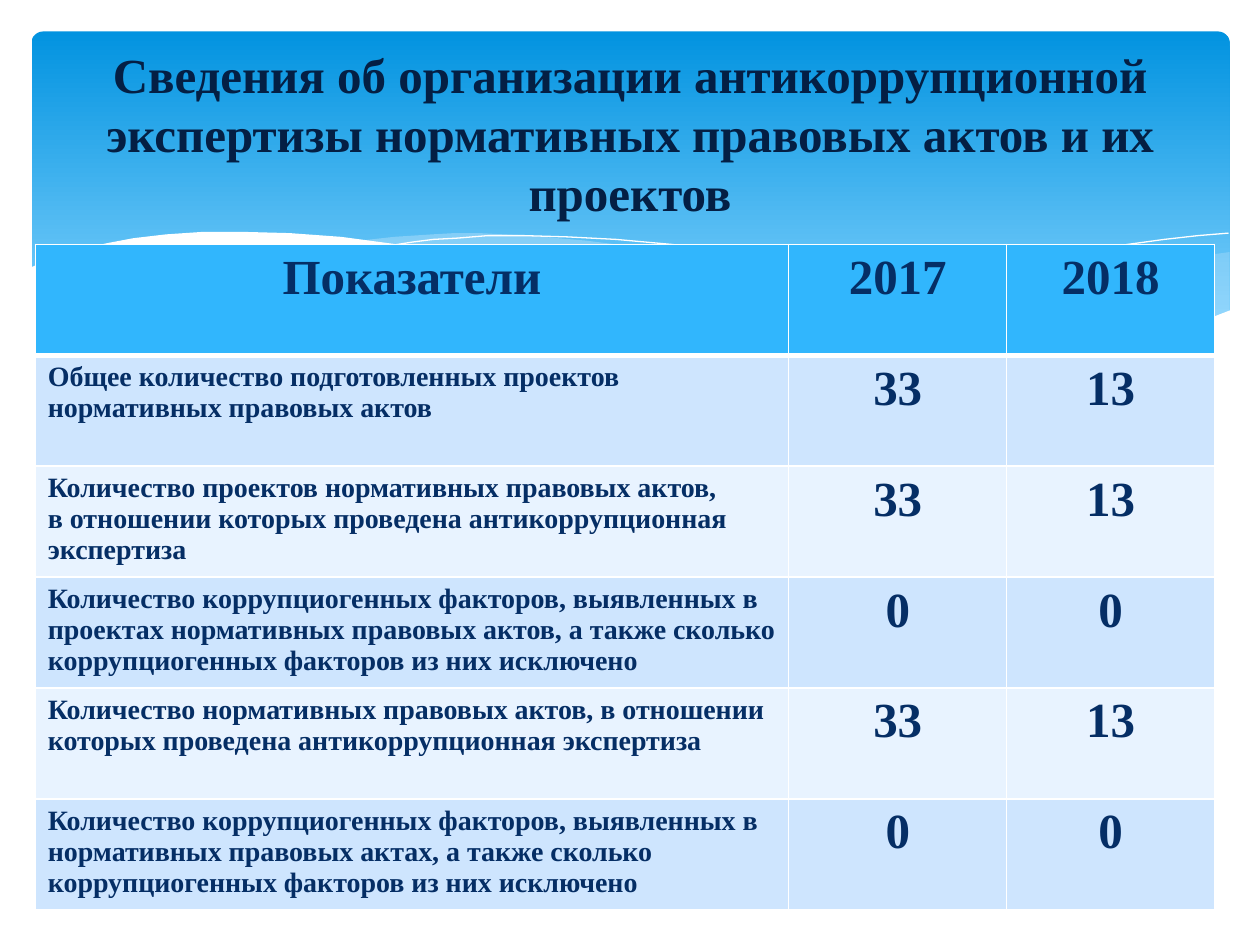
from lxml import etree
from pptx import Presentation
from pptx.dml.color import RGBColor
from pptx.enum.shapes import MSO_SHAPE
from pptx.enum.text import MSO_ANCHOR, PP_ALIGN
from pptx.oxml.ns import qn
from pptx.util import Inches, Pt

ROUNDED = MSO_SHAPE.ROUNDED_RECTANGLE
MIDDLE = MSO_ANCHOR.MIDDLE
CENTER, LEFT = PP_ALIGN.CENTER, PP_ALIGN.LEFT

FONT = "Times New Roman"
COLORS = {
    "sky_top": "0293E0", "sky_bottom": "83D3FE", "wave": "C6E7FC", "white": "FFFFFF",
    "title": "041F44", "text": "052E65",
    "header": "31B6FD", "odd_row": "CEE5FE", "even_row": "E8F3FF",
}

TITLE = ("Сведения об организации антикоррупционной экспертизы "
         "нормативных правовых актов и их проектов")
HEADER = ("Показатели", "2017", "2018")
ROWS = [
    ("Общее количество подготовленных проектов нормативных правовых актов", "33", "13"),
    ("Количество проектов нормативных правовых актов,\n"
     "в отношении которых проведена антикоррупционная экспертиза", "33", "13"),
    ("Количество коррупциогенных факторов, выявленных в проектах нормативных правовых актов, "
     "а также сколько коррупциогенных факторов из них исключено", "0", "0"),
    ("Количество нормативных правовых актов, в отношении которых проведена "
     "антикоррупционная экспертиза", "33", "13"),
    ("Количество коррупциогенных факторов, выявленных в нормативных правовых актах, "
     "а также сколько коррупциогенных факторов из них исключено", "0", "0"),
]
COLUMN_WIDTHS = (5.98, 1.73, 1.65)
ROW_HEIGHT = 0.88

RIGHT_WAVE = [
    (9.76, 2), (9.48, 2.04), (9.21, 2.1), (8.91, 2.16), (8.61, 2.23), (8.05, 2.37),
    (7.53, 2.48), (7.06, 2.57), (6.61, 2.65), (6.91, 2.69), (7.19, 2.72), (7.45, 2.75),
    (7.69, 2.77), (8.03, 2.78), (8.35, 2.77), (8.63, 2.75), (8.89, 2.72), (9.13, 2.67),
    (9.35, 2.62), (9.49, 2.57), (9.63, 2.52), (9.76, 2.47),
]
MIDDLE_WAVE = [
    (8.93, 2.73), (8.66, 2.69), (8.37, 2.65), (8.07, 2.6), (7.75, 2.54), (7.41, 2.47),
    (7.06, 2.4), (6.68, 2.31), (6.29, 2.22), (5.98, 2.14), (5.69, 2.08), (5.41, 2.03),
    (5.14, 1.98), (4.89, 1.94), (4.65, 1.91), (4.42, 1.89), (4.2, 1.87), (3.99, 1.86),
    (3.8, 1.85), (3.61, 1.85), (3.44, 1.86), (3.13, 1.88), (2.86, 1.91), (3.23, 1.96),
    (3.62, 2.03), (4.04, 2.11), (4.49, 2.22), (4.91, 2.32), (5.3, 2.4), (5.66, 2.48),
    (6.01, 2.55), (6.34, 2.61), (6.65, 2.66), (6.95, 2.7), (7.22, 2.74), (7.48, 2.76),
    (7.85, 2.78), (8.28, 2.78), (8.57, 2.77), (8.76, 2.75),
]
LEFT_CREST = [
    (3.09, 1.95), (3.28, 1.92), (3.44, 1.9), (3.63, 1.89), (3.87, 1.87), (4.16, 1.87),
    (4.5, 1.88), (4.89, 1.9), (5.33, 1.94), (5.82, 2), (6.36, 2.08), (6.95, 2.19),
    (7.6, 2.33), (8.31, 2.51), (9.07, 2.72),
]
RIGHT_CREST = [
    (6.13, 2.57), (6.53, 2.46), (6.95, 2.35), (7.48, 2.23), (8.06, 2.1), (8.66, 1.99),
    (8.95, 1.94), (9.24, 1.9), (9.51, 1.87), (9.75, 1.85),
]
WHITE_WAVE = [
    (9.77, 2.46), (9.59, 2.53), (9.4, 2.59), (9.2, 2.65), (8.99, 2.69), (8.75, 2.73),
    (8.5, 2.75), (8.09, 2.77), (7.78, 2.76), (7.44, 2.74), (7.08, 2.7), (6.68, 2.65),
    (6.26, 2.58), (5.79, 2.5), (5.29, 2.39), (4.75, 2.27), (4.18, 2.13), (3.65, 2.02),
    (3.16, 1.94), (2.71, 1.88), (2.3, 1.85), (1.93, 1.84), (1.61, 1.84), (1.32, 1.86),
    (1.06, 1.89), (0.85, 1.93), (0.67, 1.97), (0.52, 2.01), (0.36, 2.07), (0.23, 2.13),
    (0.23, 3.29), (9.77, 3.29),
]
WAVES = [
    (RIGHT_WAVE, "wave", 29), (MIDDLE_WAVE, "wave", 40),
    (LEFT_CREST, None, None), (RIGHT_CREST, None, None), (WHITE_WAVE, "white", 100),
]


def rgb(name):
    return RGBColor.from_string(COLORS[name])


def add_wave(page, points, color, opacity):
    corners = [(Inches(x), Inches(y)) for x, y in points]
    builder = page.shapes.build_freeform(*corners[0])
    builder.add_line_segments(corners[1:], close=color is not None)
    wave = builder.convert_to_shape()
    wave.shadow.inherit = False
    if color is None:
        wave.fill.background()
        wave.line.color.rgb = rgb("white")
        wave.line.width = Pt(0)
        return
    wave.fill.solid()
    wave.fill.fore_color.rgb = rgb(color)
    wave.line.fill.background()
    if opacity < 100:
        tint = wave._element.spPr.find(qn("a:solidFill"))[0]
        etree.SubElement(tint, qn("a:alpha"), val=str(opacity * 1000))


def write(frame, text, size, color, align):
    for index, line in enumerate(text.split("\n")):
        para = frame.paragraphs[0] if index == 0 else frame.add_paragraph()
        para.alignment = align
        span = para.add_run()
        span.text = line
        span.font.name, span.font.size, span.font.bold = FONT, Pt(size), True
        span.font.color.rgb = rgb(color)


def set_borders(cell, top, bottom):
    sides = (("lnL", 1), ("lnR", 1), ("lnT", top), ("lnB", bottom))
    for index, (side, width) in enumerate(sides):
        edge = etree.Element(qn("a:" + side), w=str(Pt(width)))
        fill = etree.SubElement(edge, qn("a:solidFill"))
        etree.SubElement(fill, qn("a:srgbClr"), val=COLORS["white"])
        cell._tc.get_or_add_tcPr().insert(index, edge)


def add_banner(page):
    banner = page.shapes.add_shape(ROUNDED, Inches(0.25), Inches(0.25), Inches(9.51), Inches(2.7))
    banner.adjustments[0] = 0.034
    banner.shadow.inherit = False
    banner.line.fill.background()
    banner.fill.gradient()
    banner.fill.gradient_angle = 270
    stops = ((0, "sky_top"), (0.9, "sky_bottom"))
    for stop, (position, color) in zip(banner.fill.gradient_stops, stops):
        stop.position = position
        stop.color.rgb = rgb(color)


def add_indicators(page):
    records = [HEADER] + ROWS
    table = page.shapes.add_table(
        len(records), len(HEADER), Inches(0.28), Inches(1.94),
        Inches(sum(COLUMN_WIDTHS)), Inches(ROW_HEIGHT * len(records))).table
    for column, width in zip(table.columns, COLUMN_WIDTHS):
        column.width = Inches(width)
    for r, record in enumerate(records):
        table.rows[r].height = Inches(ROW_HEIGHT)
        band = "header" if r == 0 else "odd_row" if r % 2 else "even_row"
        for c, text in enumerate(record):
            cell = table.cell(r, c)
            cell.fill.solid()
            cell.fill.fore_color.rgb = rgb(band)
            set_borders(cell, 3 if r == 1 else 1, 3 if r == 0 else 1)
            is_label = r > 0 and c == 0
            write(cell.text_frame, text, 16 if is_label else 28, "text",
                  LEFT if is_label else CENTER)


def add_title(page):
    box = page.shapes.add_textbox(Inches(0.5), Inches(0.37), Inches(9), Inches(1.37))
    box.text_frame.word_wrap = True
    box.text_frame.vertical_anchor = MIDDLE
    write(box.text_frame, TITLE, 28, "title", CENTER)


def main():
    deck = Presentation()
    deck.slide_width, deck.slide_height = Inches(10), Inches(7.5)
    page = deck.slides.add_slide(deck.slide_layouts[6])
    add_banner(page)
    for points, color, opacity in WAVES:
        add_wave(page, points, color, opacity)
    add_indicators(page)
    add_title(page)
    deck.save("out.pptx")


if __name__ == "__main__":
    main()
